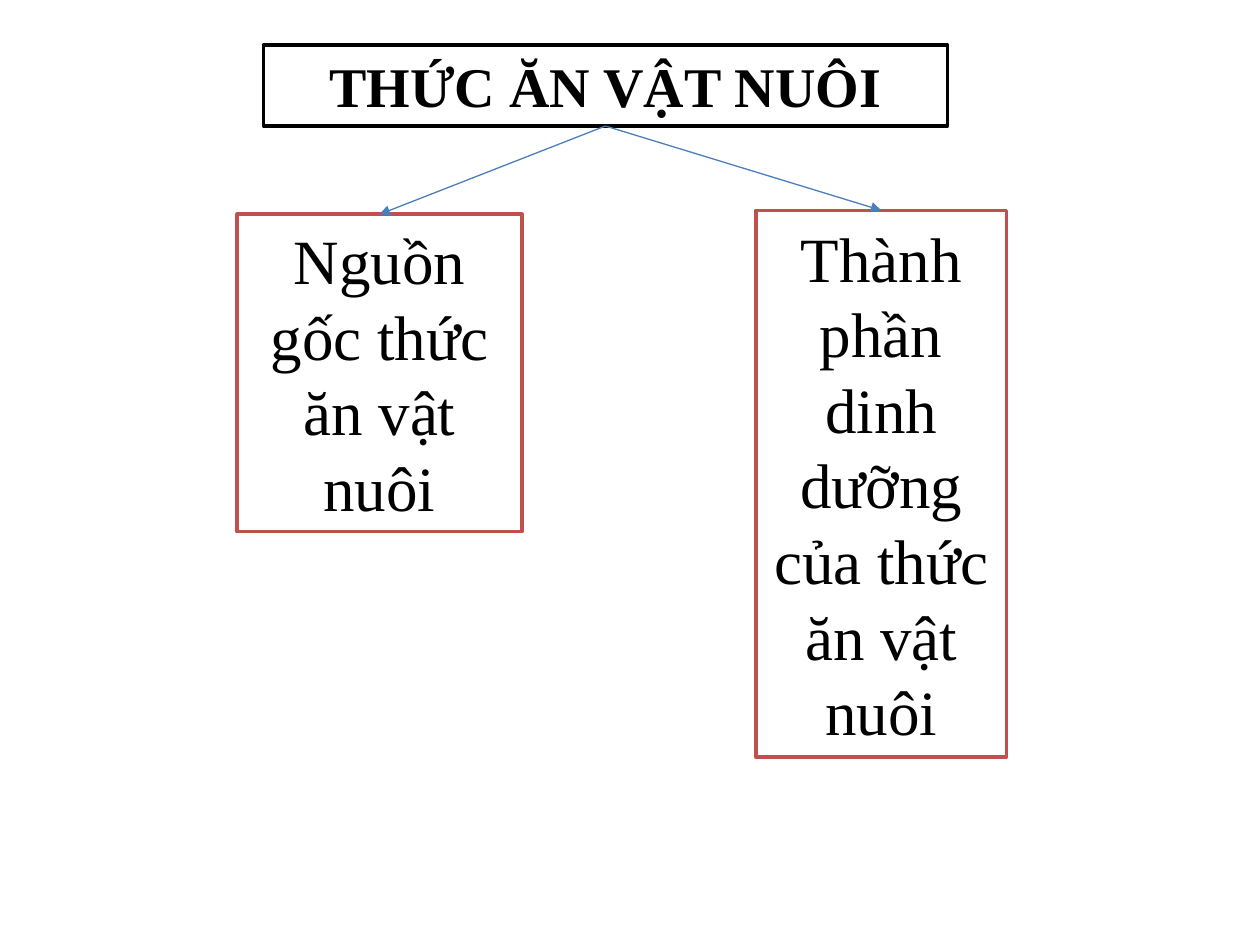
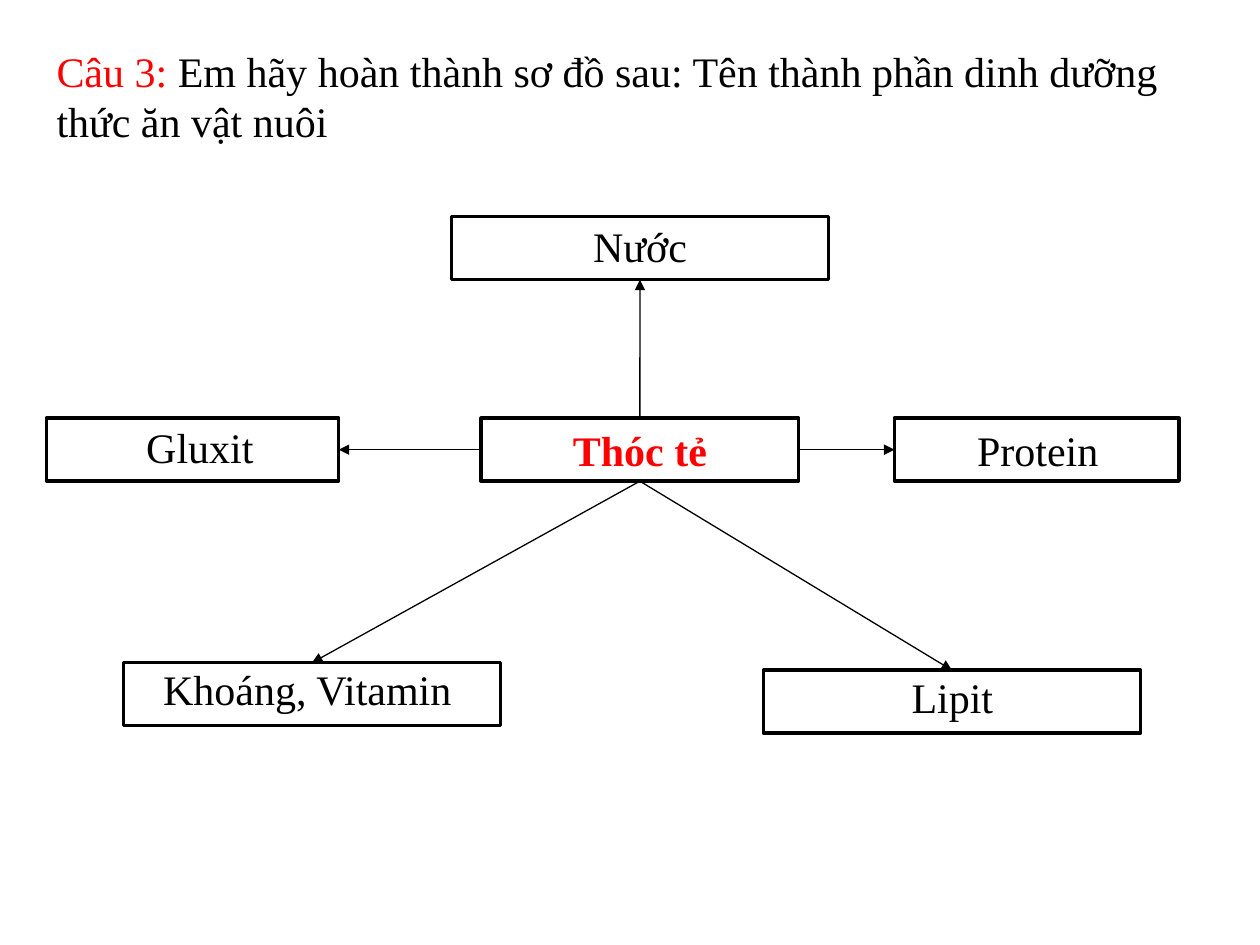
"""Build two diagram slides about animal feed and its nutrients."""
from dataclasses import dataclass

from lxml.etree import SubElement
from pptx import Presentation
from pptx.dml.color import RGBColor as Rgb
from pptx.enum.shapes import MSO_CONNECTOR as Link, MSO_SHAPE as Preset
from pptx.enum.text import MSO_AUTO_SIZE as AutoSize, PP_ALIGN as Align
from pptx.oxml.ns import qn
from pptx.util import Cm, Pt


@dataclass(frozen=True)
class Theme:
    font: str = "Times New Roman"
    ink: Rgb = Rgb(0, 0, 0)
    paper: Rgb = Rgb(255, 255, 255)
    accent: Rgb = Rgb(255, 0, 0)
    branch_edge: Rgb = Rgb(0xC0, 0x50, 0x4D)
    branch_arrow: Rgb = Rgb(0x4B, 0x7E, 0xBC)
    heading: Pt = Pt(32)
    branch: Pt = Pt(36)
    body: Pt = Pt(24)
    edge_width: Pt = Pt(2)
    arrow_width: Pt = Pt(0.75)


theme = Theme()
TOP, LEFT, BOTTOM, RIGHT = range(4)


def add_box(slide, area, text="", edge=None, size=theme.body, color=theme.ink,
            bold=False, align=Align.CENTER):
    place = [Cm(length) for length in area]
    if edge is None:
        box = slide.shapes.add_textbox(*place)
    else:
        box = slide.shapes.add_shape(Preset.RECTANGLE, *place)
        box.shadow.inherit = False
        box.fill.solid()
        box.fill.fore_color.rgb = theme.paper
        box.line.color.rgb = edge
        box.line.width = theme.edge_width
    if text:
        frame = box.text_frame
        frame.word_wrap = True
        frame.auto_size = AutoSize.SHAPE_TO_FIT_TEXT
        paragraph = frame.paragraphs[0]
        paragraph.alignment = align
        paragraph.add_run().text = text
        font = paragraph.font
        font.name, font.size, font.bold = theme.font, size, bold
        font.color.rgb = color
    return box


def add_arrow(slide, source, source_side, target, target_side, color):
    arrow = slide.shapes.add_connector(Link.STRAIGHT, 0, 0, 0, 0)
    arrow.begin_connect(source, source_side)
    arrow.end_connect(target, target_side)
    arrow.line.color.rgb = color
    arrow.line.width = theme.arrow_width
    SubElement(arrow.line._get_or_add_ln(), qn("a:tailEnd"), type="triangle")
    SubElement(arrow._element.spPr, qn("a:effectLst"))


deck = Presentation()
deck.slide_width, deck.slide_height = Cm(25.4), Cm(19.05)
blank = deck.slide_layouts[6]

overview = deck.slides.add_slide(blank)
feed = add_box(overview, (5.31, 0.91, 13.79, 1.63), "THỨC ĂN VẬT NUÔI",
               theme.ink, theme.heading, bold=True)
topics = [
    ("Nguồn gốc thức ăn vật nuôi", (4.78, 4.32, 5.74, 6.4)),
    ("Thành phần dinh dưỡng của thức ăn vật nuôi", (15.24, 4.24, 5.05, 11.02)),
]
for topic, area in topics:
    branch = add_box(overview, area, topic, theme.branch_edge, theme.branch)
    add_arrow(overview, feed, BOTTOM, branch, TOP, theme.branch_arrow)

exercise = deck.slides.add_slide(blank)
question = add_box(exercise, (0.89, 0.79, 23.6, 2.31), "Câu 3: ", align=Align.LEFT)
prompt = question.text_frame.paragraphs[0]
prompt.runs[0].font.color.rgb = theme.accent
prompt.add_run().text = ("Em hãy hoàn thành sơ đồ sau: "
                         "Tên thành phần dinh dưỡng thức ăn vật nuôi")

row_height = 1.27
rice = add_box(exercise, (9.7, 8.43, 6.4, row_height), "Thóc tẻ", theme.ink,
               color=theme.accent, bold=True)
nutrients = [
    ("Nước", (9.1, 4.37, 7.6), (9.35, 4.32, 7.11), TOP, BOTTOM),
    ("Protein", (18.03, 8.43, 5.74), (18.42, 8.43, 5), RIGHT, LEFT),
    ("Gluxit", (0.94, 8.43, 5.89), (1.3, 8.38, 5.46), LEFT, RIGHT),
    ("Khoáng, Vitamin", (2.49, 13.36, 7.6), (2.69, 13.26, 7.01), BOTTOM, TOP),
    ("Lipit", (15.39, 13.51, 7.6), (16.66, 13.41, 5.08), BOTTOM, TOP),
]
for nutrient, answer_area, label_area, rice_side, answer_side in nutrients:
    answer = add_box(exercise, (*answer_area, row_height), edge=theme.ink)
    add_arrow(exercise, rice, rice_side, answer, answer_side, theme.ink)
    add_box(exercise, (*label_area, row_height), nutrient)

deck.save("out.pptx")
